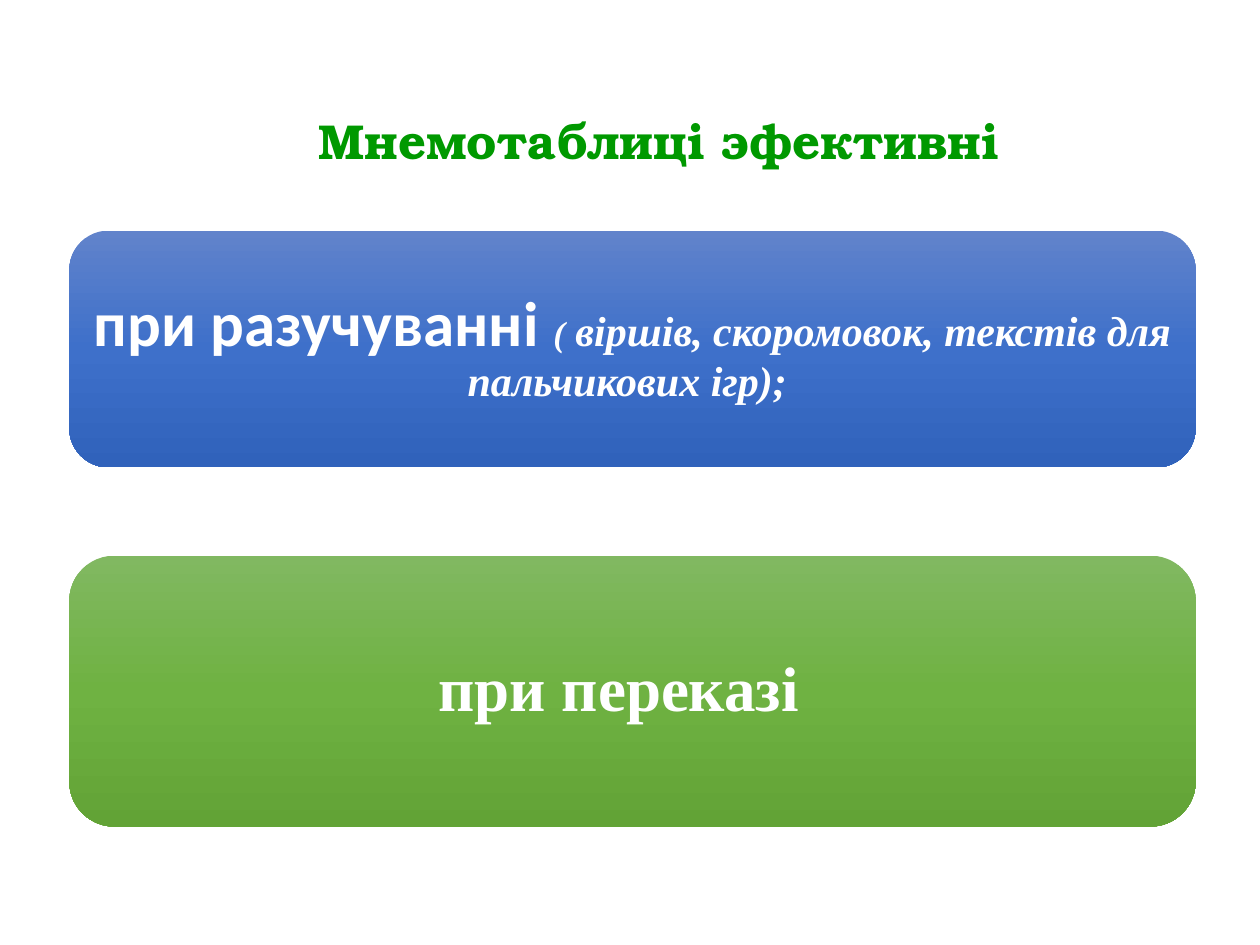
from copy import deepcopy

from pptx import Presentation
from pptx.dml.color import RGBColor
from pptx.enum.shapes import MSO_SHAPE
from pptx.enum.text import MSO_ANCHOR, PP_ALIGN
from pptx.oxml.ns import qn
from pptx.util import Inches, Pt

ROUNDED = MSO_SHAPE.ROUNDED_RECTANGLE
MIDDLE = MSO_ANCHOR.MIDDLE
CENTER = PP_ALIGN.CENTER

WHITE = RGBColor(0xFF, 0xFF, 0xFF)
TITLE_GREEN = RGBColor(0x00, 0x99, 0x00)
BLUES = [RGBColor(0x61, 0x83, 0xCB), RGBColor(0x3E, 0x70, 0xCA), RGBColor(0x30, 0x62, 0xBB)]
GREENS = [RGBColor(0x81, 0xB8, 0x61), RGBColor(0x6F, 0xB2, 0x42), RGBColor(0x62, 0xA3, 0x36)]

SERIF = "Times New Roman"
PANEL_LEFT, PANEL_WIDTH, PANEL_INSET = 0.55, 8.94, 0.05


def add_run(p, text, font, size, color, italic=False):
    r = p.add_run()
    r.text = text
    r.font.name = font
    r.font.size = Pt(size)
    r.font.bold = True
    r.font.italic = italic
    r.font.color.rgb = color


def fill_gradient(s, colors):
    s.fill.gradient()
    s.fill.gradient_angle = 270
    gs_list = s._element.spPr.find(".//" + qn("a:gsLst"))
    gs_list.insert(1, deepcopy(gs_list[0]))
    for i, (stop, color) in enumerate(zip(s.fill.gradient_stops, colors)):
        stop.position = i / (len(colors) - 1)
        stop.color.rgb = color


def add_title(slide, text):
    s = slide.shapes.add_textbox(Inches(1.3), Inches(0.83), Inches(8.12), Inches(0.57))
    tf = s.text_frame
    tf.word_wrap = True
    tf.margin_right = Inches(0.36)
    p = tf.paragraphs[0]
    p.alignment = CENTER
    add_run(p, text, "TeX Gyre Bonum", 28, TITLE_GREEN)


def add_panel(slide, top, height, colors, runs, right_inset=PANEL_INSET):
    s = slide.shapes.add_shape(
        ROUNDED, Inches(PANEL_LEFT), Inches(top), Inches(PANEL_WIDTH), Inches(height))
    s.shadow.inherit = False
    s.line.fill.background()
    fill_gradient(s, colors)
    tf = s.text_frame
    tf.word_wrap = True
    tf.vertical_anchor = MIDDLE
    tf.margin_left = tf.margin_top = tf.margin_bottom = Inches(PANEL_INSET)
    tf.margin_right = Inches(right_inset)
    p = tf.paragraphs[0]
    p.alignment = CENTER
    p.line_spacing = 0.9
    for text, font, size, italic in runs:
        add_run(p, text, font, size, WHITE, italic)


def main():
    prs = Presentation()
    prs.slide_width, prs.slide_height = Inches(10), Inches(7.5)
    slide = prs.slides.add_slide(prs.slide_layouts[6])
    add_panel(slide, 1.83, 1.88, BLUES, [
        ("при разучуванні ", "Calibri", 36, False),
        ("(", SERIF, 20, True),
        (" віршів, скоромовок, текстів для пальчикових ігр); ", SERIF, 24, True),
    ])
    add_panel(slide, 4.41, 2.15, GREENS, [("при переказі", SERIF, 36, False)], right_inset=0.27)
    add_title(slide, "Мнемотаблиці эфективні")
    prs.save("out.pptx")


if __name__ == "__main__":
    main()
